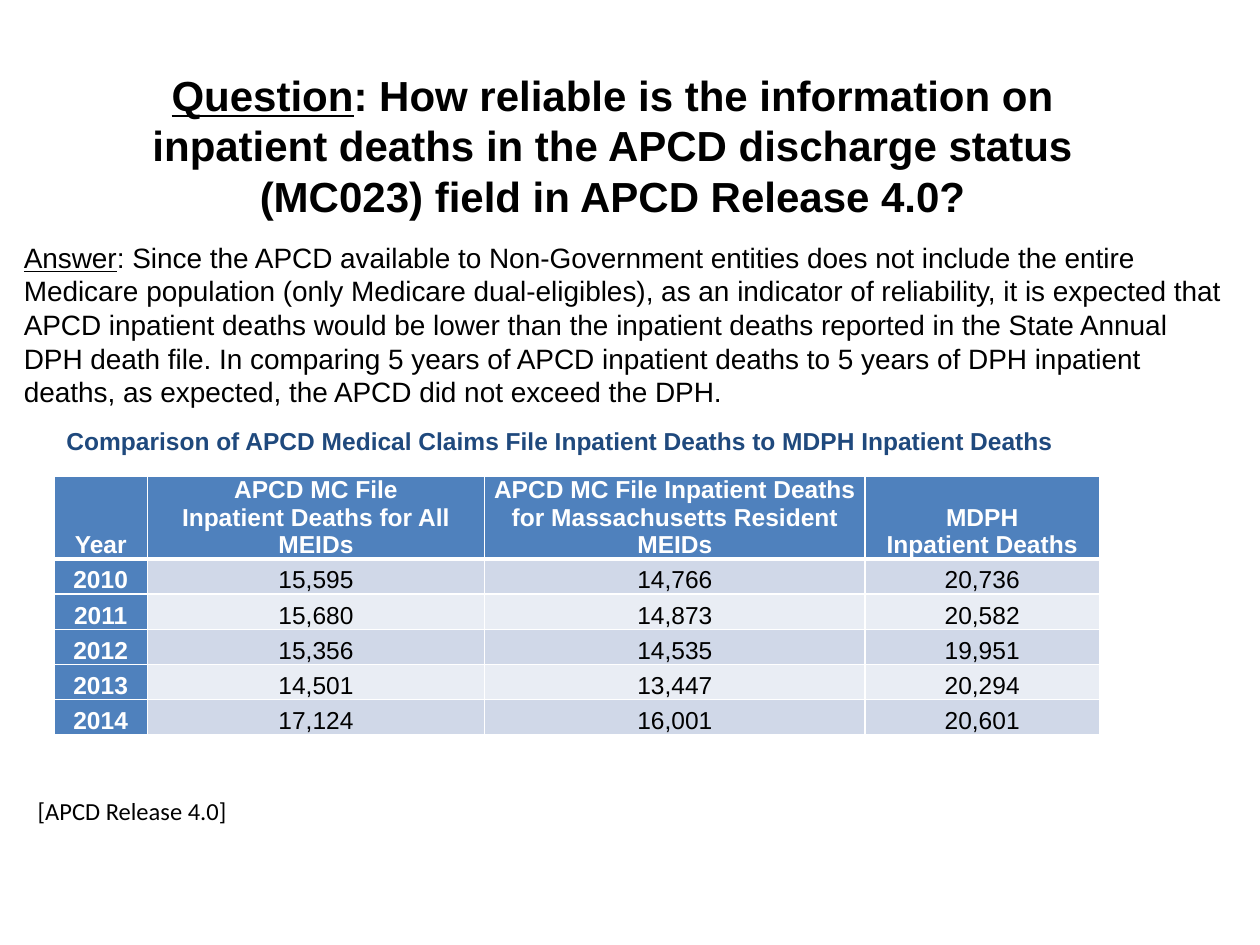
from lxml.etree import SubElement
from pptx import Presentation
from pptx.dml.color import RGBColor
from pptx.enum.text import MSO_ANCHOR, MSO_AUTO_SIZE, PP_ALIGN
from pptx.oxml.ns import qn
from pptx.util import Cm, Pt

TITLE = ("Question", ": How reliable is the information on inpatient deaths in the APCD "
         "discharge status (MC023) field in APCD Release 4.0?")
ANSWER = ("Answer", ": Since the APCD available to Non-Government entities does not include "
          "the entire Medicare population (only Medicare dual-eligibles), as an indicator of "
          "reliability, it is expected that APCD inpatient deaths would be lower than the "
          "inpatient deaths reported in the State Annual DPH death file. In comparing 5 years "
          "of APCD inpatient deaths to 5 years of DPH inpatient deaths, as expected, the APCD "
          "did not exceed the DPH.")
CAPTION = "Comparison of APCD Medical Claims File Inpatient Deaths to MDPH Inpatient Deaths"
RELEASE = "[APCD Release 4.0]"
ROWS = [
    ("Year", "APCD MC File\nInpatient Deaths for All MEIDs",
     "APCD MC File Inpatient Deaths for Massachusetts Resident MEIDs",
     "MDPH\nInpatient Deaths"),
    ("2010", "15,595", "14,766", "20,736"),
    ("2011", "15,680", "14,873", "20,582"),
    ("2012", "15,356", "14,535", "19,951"),
    ("2013", "14,501", "13,447", "20,294"),
    ("2014", "17,124", "16,001", "20,601"),
]
COL_WIDTHS = (1.88, 6.8, 7.67, 4.72)
HEADER_H, ROW_H = 1.25, 0.71
BLACK, WHITE, NAVY, BLUE = "000000", "FFFFFF", "1F497D", "4F81BD"
BANDS = ("D0D8E8", "E9EDF4")


def color(value):
    return RGBColor.from_string(value)


def style(p, size, rgb=BLACK, bold=False, name="Arial", align=PP_ALIGN.LEFT):
    p.alignment = align
    f = p.font
    f.name, f.size, f.bold = name, Pt(size), bold
    f.color.rgb = color(rgb)


def add_lead(p, lead, rest):
    r = p.add_run()
    r.text = lead
    r.font.underline = True
    p.add_run().text = rest


def add_box(s, left, top, width, height, wrap=True):
    tf = s.shapes.add_textbox(Cm(left), Cm(top), Cm(width), Cm(height)).text_frame
    tf.word_wrap = wrap
    return tf


def set_borders(cell, bottom):
    tc_pr = cell._tc.get_or_add_tcPr()
    for i, (side, width) in enumerate((("L", 1), ("R", 1), ("T", 1), ("B", bottom))):
        ln = SubElement(tc_pr, qn(f"a:ln{side}"), w=str(Pt(width)))
        tc_pr.insert(i, ln)
        SubElement(SubElement(ln, qn("a:solidFill")), qn("a:srgbClr"), val=WHITE)


def add_deaths_table(s):
    height = HEADER_H + ROW_H * (len(ROWS) - 1)
    table = s.shapes.add_table(len(ROWS), len(COL_WIDTHS), Cm(1.09), Cm(9.6),
                               Cm(sum(COL_WIDTHS)), Cm(height)).table
    for col, width in zip(table.columns, COL_WIDTHS):
        col.width = Cm(width)
    for i, row in enumerate(ROWS):
        table.rows[i].height = Cm(ROW_H if i else HEADER_H)
        for j, text in enumerate(row):
            cell = table.cell(i, j)
            head = i == 0 or j == 0
            cell.text = text
            cell.vertical_anchor = MSO_ANCHOR.BOTTOM
            cell.margin_left = cell.margin_right = Cm(0.18)
            cell.margin_top = cell.margin_bottom = 0
            cell.fill.solid()
            cell.fill.fore_color.rgb = color(BLUE if head else BANDS[(i - 1) % 2])
            set_borders(cell, 1 if i else 3)
            for p in cell.text_frame.paragraphs:
                style(p, 14, WHITE if head else BLACK, head, align=PP_ALIGN.CENTER)


def main():
    prs = Presentation()
    prs.slide_width, prs.slide_height = Cm(25.4), Cm(19.05)
    s = prs.slides.add_slide(prs.slide_layouts[5])

    title = s.shapes.title
    title.left, title.top, title.width, title.height = Cm(1.4), Cm(2.03), Cm(21.9), Cm(1.78)
    tf = title.text_frame
    tf.auto_size = MSO_AUTO_SIZE.NONE
    tf.vertical_anchor = MSO_ANCHOR.MIDDLE
    add_lead(tf.paragraphs[0], *TITLE)
    style(tf.paragraphs[0], 24, bold=True, align=PP_ALIGN.CENTER)

    add_deaths_table(s)

    tf = add_box(s, 1.09, 8.46, 20.5, 0.86, wrap=False)
    tf.vertical_anchor = MSO_ANCHOR.MIDDLE
    tf.text = CAPTION
    style(tf.paragraphs[0], 14, NAVY, True)

    tf = add_box(s, 0.23, 4.72, 24.79, 3.68)
    add_lead(tf.paragraphs[0], *ANSWER)
    style(tf.paragraphs[0], 16)

    tf = add_box(s, 0.51, 15.93, 5.54, 0.86)
    tf.text = RELEASE
    style(tf.paragraphs[0], 14, name="Calibri")

    prs.save("out.pptx")


if __name__ == "__main__":
    main()
